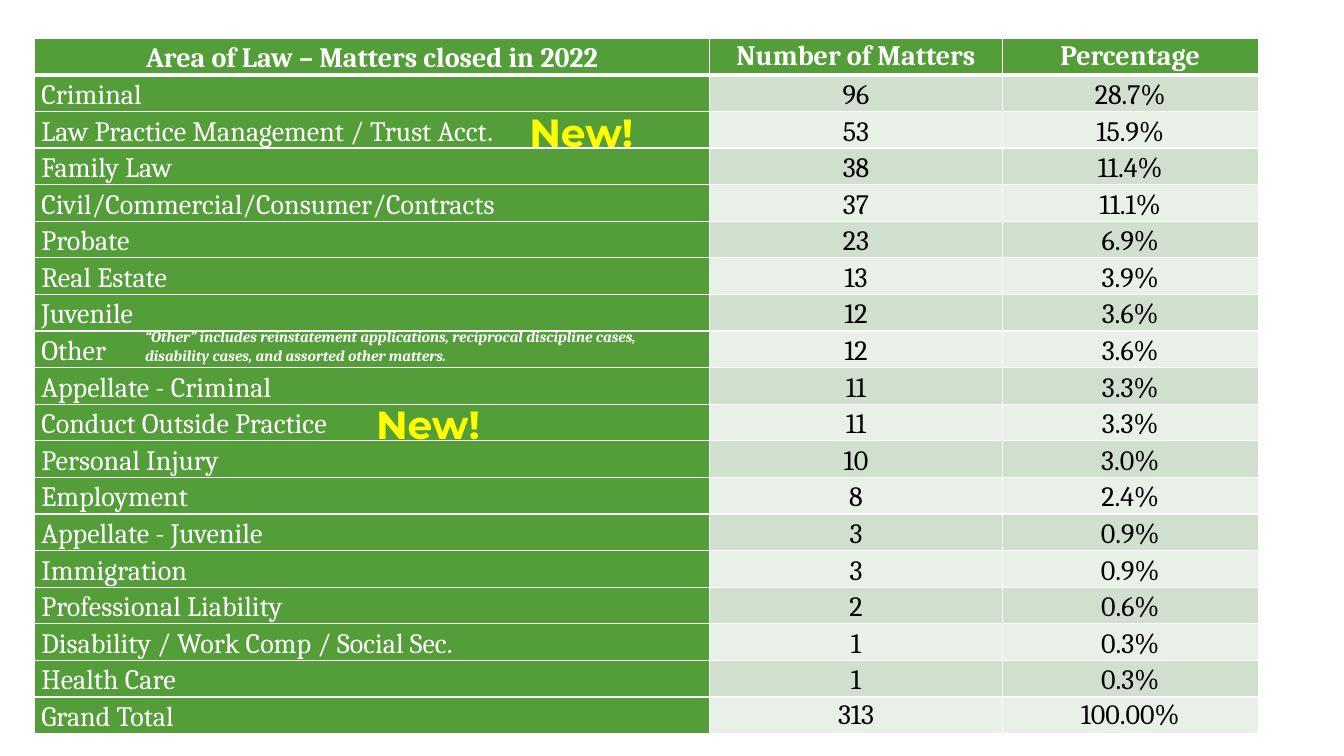
from dataclasses import dataclass

from lxml import etree
from pptx import Presentation
from pptx.dml.color import RGBColor
from pptx.enum.text import MSO_ANCHOR, MSO_AUTO_SIZE, PP_ALIGN
from pptx.oxml.ns import qn
from pptx.util import Inches, Pt

LEFT, CENTER = PP_ALIGN.LEFT, PP_ALIGN.CENTER
MIDDLE, BOTTOM = MSO_ANCHOR.MIDDLE, MSO_ANCHOR.BOTTOM
FIT_SHAPE = MSO_AUTO_SIZE.SHAPE_TO_FIT_TEXT


@dataclass(frozen=True)
class Theme:
    green: str = "549E39"
    dark_band: str = "D1DFCE"
    light_band: str = "E9F0E8"
    white: str = "FFFFFF"
    black: str = "000000"
    yellow: str = "FFFF00"
    outline: str = "4AB5C4"
    serif: str = "Cambria"
    display: str = "Montserrat"
    table_size: float = 20
    note_size: float = 11
    badge_size: float = 28
    border: float = 1
    header_border: float = 3
    outline_width: float = 0.8


THEME = Theme()


@dataclass(frozen=True)
class TextStyle:
    font: str
    size: float
    color: str
    bold: bool = False
    italic: bool = False
    outline: str = ""


@dataclass(frozen=True)
class Matter:
    area: str
    count: str
    share: str


@dataclass(frozen=True)
class Label:
    lines: tuple[str, ...]
    left: float
    top: float
    width: float
    height: float
    style: TextStyle
    align: PP_ALIGN
    wrap: bool


HEADER_STYLE = TextStyle(THEME.serif, THEME.table_size, THEME.white, bold=True)
AREA_STYLE = TextStyle(THEME.serif, THEME.table_size, THEME.white)
VALUE_STYLE = TextStyle(THEME.serif, THEME.table_size, THEME.black)
NOTE_STYLE = TextStyle(THEME.serif, THEME.note_size, THEME.white, bold=True, italic=True)
BADGE_STYLE = TextStyle(THEME.display, THEME.badge_size, THEME.yellow, bold=True,
                        outline=THEME.outline)

MATTERS = (
    Matter("Area of Law – Matters closed in 2022", "Number of Matters", "Percentage"),
    Matter("Criminal", "96", "28.7%"),
    Matter("Law Practice Management / Trust Acct.", "53", "15.9%"),
    Matter("Family Law", "38", "11.4%"),
    Matter("Civil/Commercial/Consumer/Contracts", "37", "11.1%"),
    Matter("Probate", "23", "6.9%"),
    Matter("Real Estate", "13", "3.9%"),
    Matter("Juvenile", "12", "3.6%"),
    Matter("Other", "12", "3.6%"),
    Matter("Appellate - Criminal", "11", "3.3%"),
    Matter("Conduct Outside Practice", "11", "3.3%"),
    Matter("Personal Injury", "10", "3.0%"),
    Matter("Employment", "8", "2.4%"),
    Matter("Appellate - Juvenile", "3", "0.9%"),
    Matter("Immigration", "3", "0.9%"),
    Matter("Professional Liability", "2", "0.6%"),
    Matter("Disability / Work Comp / Social Sec.", "1", "0.3%"),
    Matter("Health Care", "1", "0.3%"),
    Matter("Grand Total", "313", "100.00%"),
)
COLUMN_WIDTHS = (6.7, 2.9, 2.54)
TABLE_LEFT, TABLE_TOP, TABLE_HEIGHT = 0.34, 0.38, 6.9

LABELS = (
    Label(("“Other” includes reinstatement applications, reciprocal discipline cases,",
           "disability cases, and assorted other matters."),
          1.34, 3.2, 5.2, 0.47, NOTE_STYLE, LEFT, wrap=False),
    Label(("New!",), 3.47, 3.92, 1.55, 0.57, BADGE_STYLE, CENTER, wrap=True),
    Label(("New!",), 4.99, 1.03, 1.55, 0.57, BADGE_STYLE, CENTER, wrap=True),
)


def add_line(parent, tag: str, width: float, color: str) -> None:
    line = etree.SubElement(parent, qn(tag), w=str(Pt(width)))
    fill = etree.SubElement(line, qn("a:solidFill"))
    etree.SubElement(fill, qn("a:srgbClr"), val=color)


def add_run(paragraph, text: str, style: TextStyle) -> None:
    run = paragraph.add_run()
    run.text = text
    if style.outline:
        add_line(run.font._element, "a:ln", THEME.outline_width, style.outline)
    run.font.name = style.font
    run.font.size = Pt(style.size)
    run.font.bold = style.bold
    run.font.italic = style.italic
    run.font.color.rgb = RGBColor.from_string(style.color)


def fill_cell(cell, text: str, row: int, column: int) -> None:
    is_header, is_area = row == 0, column == 0
    is_total = row == len(MATTERS) - 1
    cell.margin_left = cell.margin_right = Inches(0.07)
    cell.margin_top = cell.margin_bottom = 0
    cell.vertical_anchor = MIDDLE if (is_header or is_total) and not is_area else BOTTOM

    top = THEME.header_border if row == 1 else THEME.border
    bottom = THEME.header_border if is_header else THEME.border
    properties = cell._tc.get_or_add_tcPr()
    for tag, width in (("a:lnL", THEME.border), ("a:lnR", THEME.border),
                       ("a:lnT", top), ("a:lnB", bottom)):
        add_line(properties, tag, width, THEME.white)

    band = THEME.dark_band if row % 2 else THEME.light_band
    cell.fill.solid()
    cell.fill.fore_color.rgb = RGBColor.from_string(
        THEME.green if is_header or is_area else band)

    paragraph = cell.text_frame.paragraphs[0]
    paragraph.alignment = LEFT if is_area and not is_header else CENTER
    style = HEADER_STYLE if is_header else AREA_STYLE if is_area else VALUE_STYLE
    add_run(paragraph, text, style)


def add_matters_table(slide) -> None:
    table = slide.shapes.add_table(
        len(MATTERS), len(COLUMN_WIDTHS), Inches(TABLE_LEFT), Inches(TABLE_TOP),
        Inches(sum(COLUMN_WIDTHS)), Inches(TABLE_HEIGHT)).table
    for column, width in zip(table.columns, COLUMN_WIDTHS):
        column.width = Inches(width)
    for row, matter in enumerate(MATTERS):
        table.rows[row].height = Inches(TABLE_HEIGHT / len(MATTERS))
        for column, text in enumerate((matter.area, matter.count, matter.share)):
            fill_cell(table.cell(row, column), text, row, column)


def add_label(slide, label: Label) -> None:
    box = slide.shapes.add_textbox(Inches(label.left), Inches(label.top),
                                   Inches(label.width), Inches(label.height))
    frame = box.text_frame
    frame.word_wrap = label.wrap
    frame.auto_size = FIT_SHAPE
    for index, line in enumerate(label.lines):
        paragraph = frame.add_paragraph() if index else frame.paragraphs[0]
        paragraph.alignment = label.align
        add_run(paragraph, line, label.style)


def main() -> None:
    presentation = Presentation()
    presentation.slide_width = Inches(13.33)
    presentation.slide_height = Inches(7.5)
    slide = presentation.slides.add_slide(presentation.slide_layouts[6])
    add_matters_table(slide)
    for label in LABELS:
        add_label(slide, label)
    presentation.save("out.pptx")


if __name__ == "__main__":
    main()
